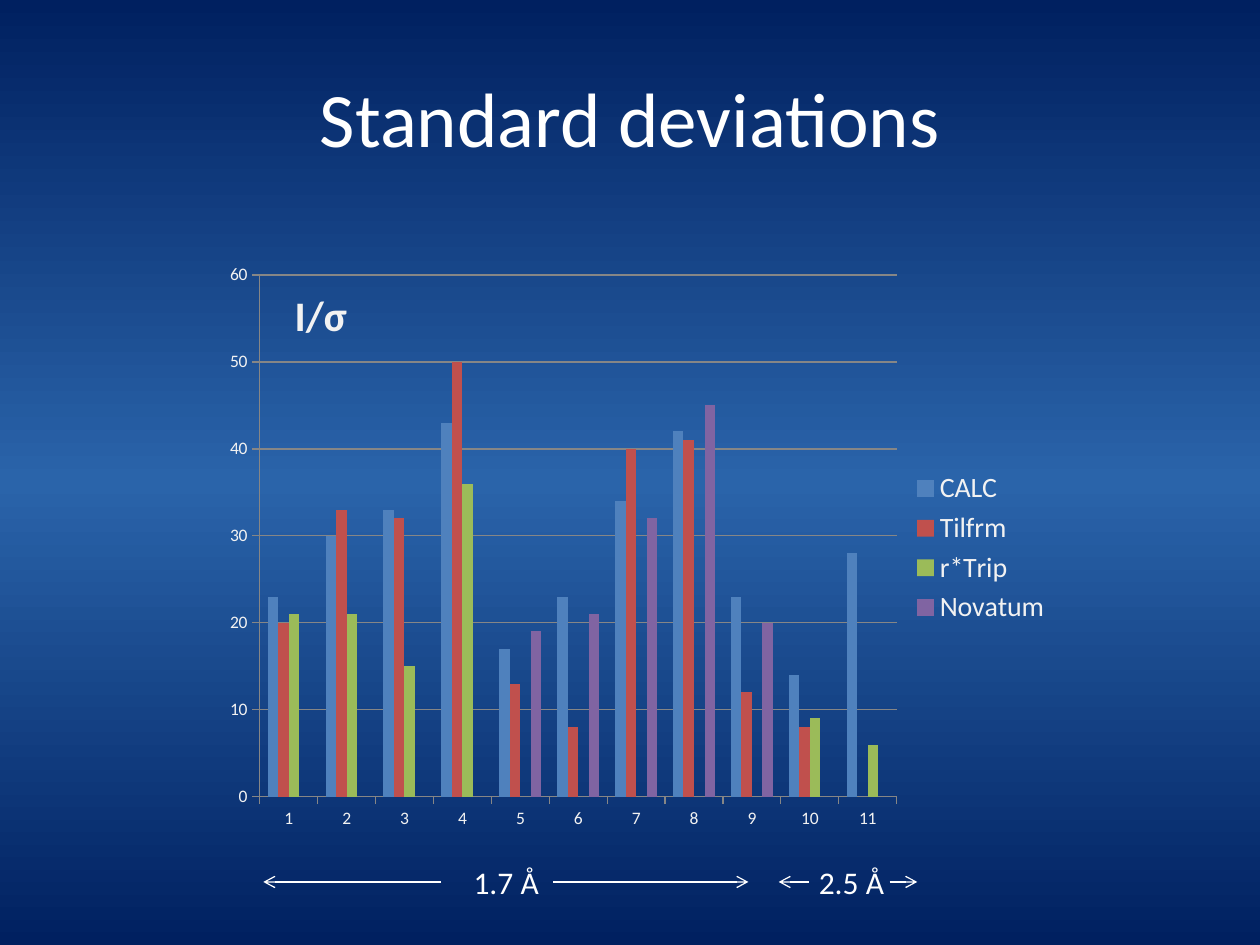
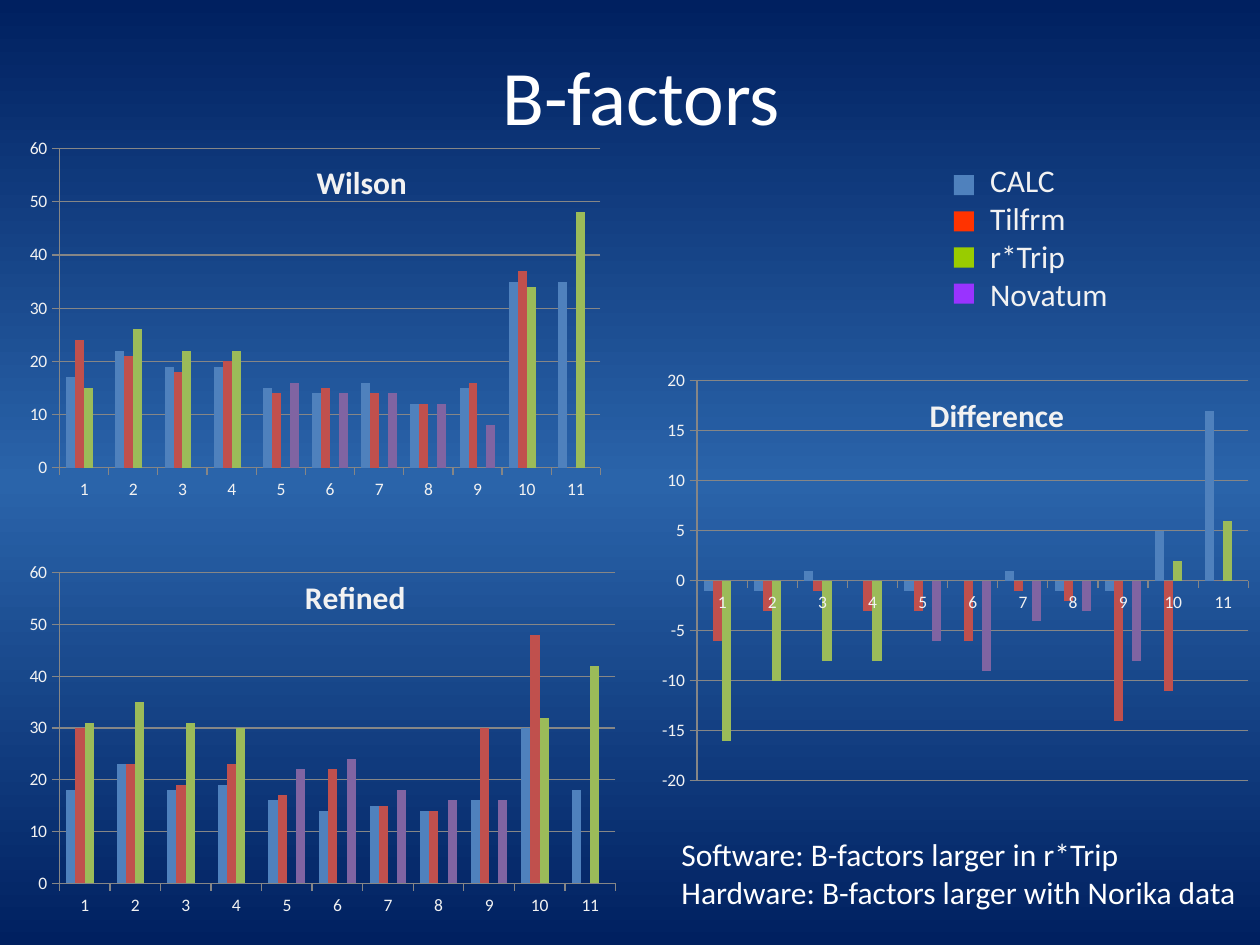
from copy import deepcopy

from pptx import Presentation
from pptx.chart.data import CategoryChartData
from pptx.dml.color import RGBColor
from pptx.enum.chart import XL_CHART_TYPE, XL_LEGEND_POSITION, XL_TICK_MARK
from pptx.enum.shapes import MSO_CONNECTOR, MSO_SHAPE
from pptx.enum.text import MSO_ANCHOR, MSO_AUTO_SIZE, PP_ALIGN
from pptx.oxml.ns import qn
from pptx.oxml.xmlchemy import OxmlElement
from pptx.util import Inches, Pt

COLUMNS = XL_CHART_TYPE.COLUMN_CLUSTERED
LEGEND_RIGHT = XL_LEGEND_POSITION.RIGHT
TICK_OUT = XL_TICK_MARK.OUTSIDE
STRAIGHT = MSO_CONNECTOR.STRAIGHT
RECTANGLE = MSO_SHAPE.RECTANGLE
MIDDLE = MSO_ANCHOR.MIDDLE
FIT_TEXT = MSO_AUTO_SIZE.SHAPE_TO_FIT_TEXT
CENTER = PP_ALIGN.CENTER

SLIDE_WIDTH, SLIDE_HEIGHT = Inches(10), Inches(7.5)
FONT = "Calibri"
WHITE, PALE, GRID = "FFFFFF", "F2F2F2", "868686"
BACKDROP = [(0, "002060"), (0.51, "2A64AA"), (1, "002060")]
PROGRAMS = ["CALC", "Tilfrm", "r*Trip", "Novatum"]
BAR_COLORS = ["4F81BD", "C0504D", "9BBB59", "8064A2"]
KEY_COLORS = ["4F81BD", "FF3300", "99CC00", "9933FF"]
DATASETS = [str(number) for number in range(1, 12)]
NO = None

SIGNAL = [
    [23, 30, 33, 43, 17, 23, 34, 42, 23, 14, 28],
    [20, 33, 32, 50, 13, 8, 40, 41, 12, 8, NO],
    [21, 21, 15, 36, NO, NO, NO, NO, NO, 9, 6],
    [NO, NO, NO, NO, 19, 21, 32, 45, 20, NO, NO],
]
WILSON = [
    [17, 22, 19, 19, 15, 14, 16, 12, 15, 35, 35],
    [24, 21, 18, 20, 14, 15, 14, 12, 16, 37, NO],
    [15, 26, 22, 22, NO, NO, NO, NO, NO, 34, 48],
    [NO, NO, NO, NO, 16, 14, 14, 12, 8, NO, NO],
]
REFINED = [
    [18, 23, 18, 19, 16, 14, 15, 14, 16, 30, 18],
    [30, 23, 19, 23, 17, 22, 15, 14, 30, 48, NO],
    [31, 35, 31, 30, NO, NO, NO, NO, NO, 32, 42],
    [NO, NO, NO, NO, 22, 24, 18, 16, 16, NO, NO],
]
DIFFERENCE = [
    [-1, -1, 1, 0, -1, 0, 1, -1, -1, 5, 17],
    [-6, -3, -1, -3, -3, -6, -1, -2, -14, -11, 0],
    [-16, -10, -8, -8, 0, 0, 0, 0, 0, 2, 6],
    [0, 0, 0, 0, -6, -9, -4, -3, -8, 0, 0],
]


def rgb(color):
    return RGBColor.from_string(color)


def across(percent):
    return round(SLIDE_WIDTH * percent / 100)


def down(percent):
    return round(SLIDE_HEIGHT * percent / 100)


def area(left, top, width, height):
    return across(left), down(top), across(width), down(height)


def style(font, size, color, bold=False):
    font.name, font.size, font.bold = FONT, Pt(size), bold
    font.color.rgb = rgb(color)


def paint_backdrop(master):
    fill = master.background.fill
    fill.gradient()
    fill.gradient_angle = 270
    stops = master.element.find(".//" + qn("a:gsLst"))
    stops.insert(1, deepcopy(stops[0]))
    for stop, (position, color) in zip(fill.gradient_stops, BACKDROP):
        stop.position = position
        stop.color.rgb = rgb(color)


def add_slide(prs, heading, left=5, top=4):
    slide = prs.slides.add_slide(prs.slide_layouts[5])
    title = slide.shapes.title
    title.left, title.top, title.width, title.height = area(left, top, 90, 16.67)
    title.text_frame.text = heading
    title.text_frame.vertical_anchor = MIDDLE
    paragraph = title.text_frame.paragraphs[0]
    paragraph.alignment = CENTER
    style(paragraph.font, 44, WHITE)
    return slide


def add_label(slide, lines, box, size=18, color=WHITE, bold=False):
    frame = slide.shapes.add_textbox(*area(*box)).text_frame
    frame.word_wrap = False
    frame.auto_size = FIT_TEXT
    frame.text = "\n".join(lines)
    for paragraph in frame.paragraphs:
        style(paragraph.font, size, color, bold)


def add_arrow(slide, start, end, level=93.33):
    arrow = slide.shapes.add_connector(
        STRAIGHT, across(start), down(level), across(end), down(level))
    arrow.line.color.rgb = rgb(WHITE)
    arrow.line.width = Pt(0.75)
    head = OxmlElement("a:tailEnd")
    head.set("type", "arrow")
    arrow.line._get_or_add_ln().append(head)
    arrow._element.spPr.append(OxmlElement("a:effectLst"))


def add_swatch(slide, left, top, color):
    swatch = slide.shapes.add_shape(RECTANGLE, *area(left, top, 1.6, 2.13))
    swatch.shadow.inherit = False
    swatch.fill.solid()
    swatch.fill.fore_color.rgb = rgb(color)
    swatch.line.fill.background()


def fix_layout(part, index, shares, inner=False):
    layout = part.find(qn("c:layout"))
    if layout is None:
        layout = OxmlElement("c:layout")
        part.insert(index, layout)
    manual = OxmlElement("c:manualLayout")
    layout.append(manual)
    settings = [("layoutTarget", "inner")] if inner else []
    settings += [("xMode", "edge"), ("yMode", "edge")]
    settings += [(key, share / 100) for key, share in zip("xywh", shares)]
    for key, value in settings:
        setting = OxmlElement("c:" + key)
        setting.set("val", str(value))
        manual.append(setting)


def style_axis(axis):
    axis.major_tick_mark = TICK_OUT
    axis.format.line.color.rgb = rgb(GRID)
    style(axis.tick_labels.font, 10, PALE)


def add_columns(slide, rows, box, plot, low=0, high=60, step=10):
    data = CategoryChartData()
    data.categories = DATASETS
    for program, values in zip(PROGRAMS, rows):
        data.add_series(program, values)
    chart = slide.shapes.add_chart(COLUMNS, *area(*box), data).chart
    style(chart.font, 10, PALE)
    chart.has_title = chart.has_legend = False
    bars = chart.plots[0]
    bars.gap_width, bars.vary_by_categories = 150, False
    for series, color in zip(bars.series, BAR_COLORS):
        series.invert_if_negative = False
        series.format.fill.solid()
        series.format.fill.fore_color.rgb = rgb(color)
    scale = chart.value_axis
    scale.minimum_scale, scale.maximum_scale, scale.major_unit = low, high, step
    scale.has_major_gridlines = True
    scale.major_gridlines.format.line.color.rgb = rgb(GRID)
    for axis in (chart.category_axis, scale):
        style_axis(axis)
    fix_layout(chart._chartSpace.chart.plotArea, 0, plot, inner=True)
    return chart


def add_chart_heading(chart, text, position):
    heading = chart.chart_title
    heading.text_frame.text = text
    style(heading.text_frame.paragraphs[0].font, 18, PALE, bold=True)
    heading._element.find(qn("c:overlay")).set("val", "1")
    fix_layout(heading._element, 1, position)


def add_legend(chart):
    chart.has_legend = True
    chart.legend.position = LEGEND_RIGHT
    chart.legend.include_in_layout = False
    style(chart.legend.font, 16, PALE)


def build_deviations(prs):
    slide = add_slide(prs, "Standard deviations")
    signal = add_columns(slide, SIGNAL, (16.9, 26.93, 67.5, 62.13),
                         (5.5, 3.5, 74.9, 88.9))
    add_legend(signal)
    add_label(slide, ["I/σ"], (22.4, 30, 6.2, 6.67), 24, PALE, bold=True)
    for resolution, left in (("1.7 Å", 36.6), ("2.5 Å", 64)):
        add_label(slide, [resolution], (left, 90.67, 7.2, 5.33))
    for start, end in ((35, 20.9), (43.9, 59.4), (64.2, 61.8), (70.6, 72.8)):
        add_arrow(slide, start, end)


def build_b_factors(prs):
    slide = add_slide(prs, "B-factors", 5.9, 1.73)
    wilson = add_columns(slide, WILSON, (0, 13.6, 70.5, 40.67),
                         (6.7, 5.2, 60.9, 83.1))
    add_chart_heading(wilson, "Wilson", (35, 6.9))
    refined = add_columns(slide, REFINED, (0, 58.4, 65.4, 39.47),
                          (7.2, 5.6, 67.5, 83.3))
    add_chart_heading(refined, "Refined", (36.3, 4.8))
    add_columns(slide, DIFFERENCE, (51.6, 38.4, 48.4, 46.13),
                (7.7, 4.1, 90.4, 91.8), -20, 20, 5)
    add_label(slide, PROGRAMS, (77.6, 16.4, 14, 17.47), color=PALE)
    for row, color in enumerate(KEY_COLORS):
        add_swatch(slide, 75.7, 18.53 + 3.83 * row, color)
    add_label(slide, ["Difference"], (72.8, 41.2, 12.9, 5.33), color=PALE, bold=True)
    add_label(slide, ["Software: B-factors larger in r*Trip",
                      "Hardware: B-factors larger with Norika data"],
              (53.1, 87.73, 46.9, 9.47))


def main():
    prs = Presentation()
    prs.slide_width, prs.slide_height = SLIDE_WIDTH, SLIDE_HEIGHT
    paint_backdrop(prs.slide_master)
    build_deviations(prs)
    build_b_factors(prs)
    prs.save("out.pptx")


if __name__ == "__main__":
    main()
